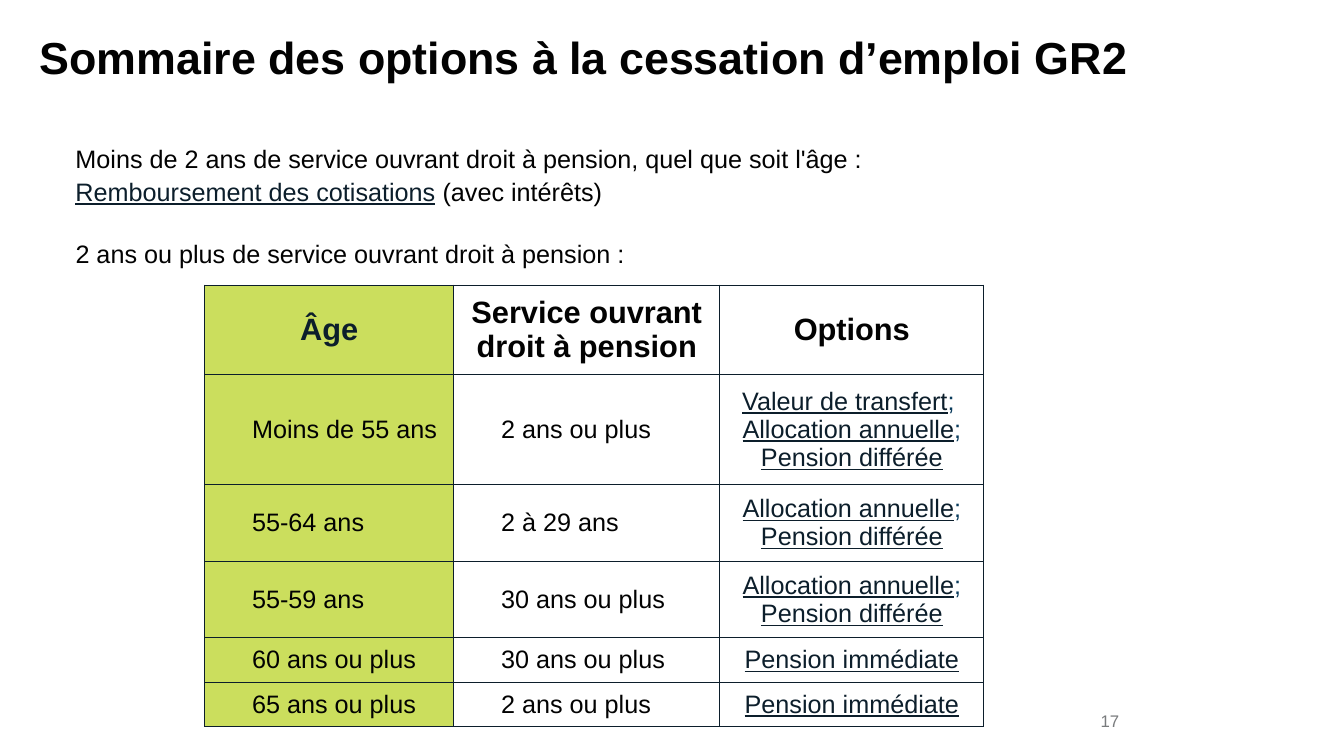
import pptx
import pptx.dml.color
import pptx.enum.text
import pptx.oxml
import pptx.oxml.ns
import pptx.util

ALIGN = pptx.enum.text.PP_ALIGN
ANCHOR = pptx.enum.text.MSO_ANCHOR
BLACK, NAVY, BLUE, GREY = "020202", "0C1E2B", "093B5C", "797B7D"
LIME, WHITE = "C3D941", "FFFFFF"


def color(value):
    return pptx.dml.color.RGBColor.from_string(value)


def write(paragraph, text, size=18, ink=BLACK, bold=False, underline=False):
    run = paragraph.add_run()
    run.text = text
    font = run.font
    font.name, font.size = "Arial", pptx.util.Pt(size)
    font.bold, font.underline = bold, underline
    font.color.rgb = color(ink)


def write_options(paragraph, options, open_end=False):
    """Underline each option and separate them with semicolons."""
    for index, option in enumerate(options):
        write(paragraph, option, ink=NAVY, underline=True)
        if open_end or index < len(options) - 1:
            write(paragraph, "; ", ink=BLUE)


class SlideBuilder:
    """Places elements on a grid of 100 columns by 100 rows."""

    def __init__(self, presentation):
        self.column = presentation.slide_width / 100
        self.row = presentation.slide_height / 100
        self.slide = presentation.slides.add_slide(presentation.slide_layouts[6])

    def area(self, left, top, width, height):
        return (round(left * self.column), round(top * self.row),
                round(width * self.column), round(height * self.row))

    def text_box(self, area, margin=None, anchor=ANCHOR.TOP):
        frame = self.slide.shapes.add_textbox(*self.area(*area)).text_frame
        frame.word_wrap = True
        frame.vertical_anchor = anchor
        if margin is not None:
            frame.margin_left = frame.margin_right = margin
            frame.margin_top = frame.margin_bottom = margin
        return frame

    def table(self, left, top, columns, rows):
        area = self.area(left, top, sum(columns), sum(rows))
        table = self.slide.shapes.add_table(len(rows), len(columns), *area).table
        table.first_row = table.horz_banding = False
        for column, width in zip(table.columns, columns):
            column.width = round(width * self.column)
        for row, height in zip(table.rows, rows):
            row.height = round(height * self.row)
        return table

    def style_cell(self, cell, fill, opacity):
        properties = cell._tc.get_or_add_tcPr()
        namespace = pptx.oxml.ns.nsdecls("a")
        for side in "LRTB":
            properties.append(pptx.oxml.parse_xml(
                f'<a:ln{side} {namespace} w="12700"><a:solidFill>'
                f'<a:srgbClr val="{NAVY}"/></a:solidFill></a:ln{side}>'))
        cell.fill.solid()
        cell.fill.fore_color.rgb = color(fill)
        fill_color = properties.find(
            f"{pptx.oxml.ns.qn('a:solidFill')}/{pptx.oxml.ns.qn('a:srgbClr')}")
        fill_color.append(pptx.oxml.parse_xml(
            f'<a:alpha {namespace} val="{opacity * 1000}"/>'))
        cell.vertical_anchor = ANCHOR.MIDDLE


def add_texts(builder):
    title = builder.text_box((2.93, 4.67, 83.05, 10.4), margin=0).paragraphs[0]
    title.line_spacing = 0.9
    write(title, "Sommaire des options à la cessation d’emploi GR2", size=32, bold=True)

    short_service = builder.text_box((4.88, 18.27, 80.2, 9.47))
    write(short_service.paragraphs[0],
          "Moins de 2 ans de service ouvrant droit à pension, quel que soit l'âge :")
    refund = short_service.add_paragraph()
    refund.space_before = pptx.util.Pt(2)
    write_options(refund, ["Remboursement des cotisations"])
    write(refund, " ", ink=BLUE)
    write(refund, "(avec intérêts)")

    long_service = builder.text_box((4.88, 30.93, 74.79, 5.33))
    write(long_service.paragraphs[0], "2 ans ou plus de service ouvrant droit à pension :")

    number = builder.text_box((72.24, 92.67, 11.78, 5.33), anchor=ANCHOR.MIDDLE)
    number.paragraphs[0].alignment = ALIGN.RIGHT
    write(number.paragraphs[0], "17", size=12, ink=GREY)


def add_options_table(builder):
    headings = ["Âge", "Service ouvrant droit à pension", "Options"]
    transfer, immediate = ["Valeur de transfert"], ["Pension immédiate"]
    deferred = ["Allocation annuelle", "Pension différée"]
    cases = [
        ("Moins de 55 ans", "2 ans ou plus", [transfer, deferred]),
        ("55-64 ans", "2 à 29 ans", [deferred]),
        ("55-59 ans", "30 ans ou plus", [deferred]),
        ("60 ans ou plus", "30 ans ou plus", [immediate]),
        ("65 ans ou plus", "2 ans ou plus", [immediate]),
    ]
    table = builder.table(15.23, 37.73, [18.53, 19.8, 19.65],
                          [11.8, 14.6, 10.13, 10.13, 5.87, 5.87])
    for row in table.rows:
        for index, cell in enumerate(row.cells):
            builder.style_cell(cell, *((WHITE, 25) if index else (LIME, 85)))

    for index, heading in enumerate(headings):
        paragraph = table.cell(0, index).text_frame.paragraphs[0]
        paragraph.alignment = ALIGN.CENTER
        write(paragraph, heading, size=22, ink=BLACK if index else NAVY, bold=True)

    for row, (age, service, option_lines) in enumerate(cases, start=1):
        for column, text in enumerate((age, service)):
            cell = table.cell(row, column)
            cell.margin_left = pptx.util.Inches(0.47)
            write(cell.text_frame.paragraphs[0], text)
        frame = table.cell(row, 2).text_frame
        for index, options in enumerate(option_lines):
            paragraph = frame.add_paragraph() if index else frame.paragraphs[0]
            paragraph.alignment = ALIGN.CENTER
            write_options(paragraph, options, open_end=index < len(option_lines) - 1)


def main():
    presentation = pptx.Presentation()
    presentation.slide_width = pptx.util.Inches(13.33)
    presentation.slide_height = pptx.util.Inches(7.5)
    builder = SlideBuilder(presentation)
    add_texts(builder)
    add_options_table(builder)
    presentation.save("out.pptx")


if __name__ == "__main__":
    main()
